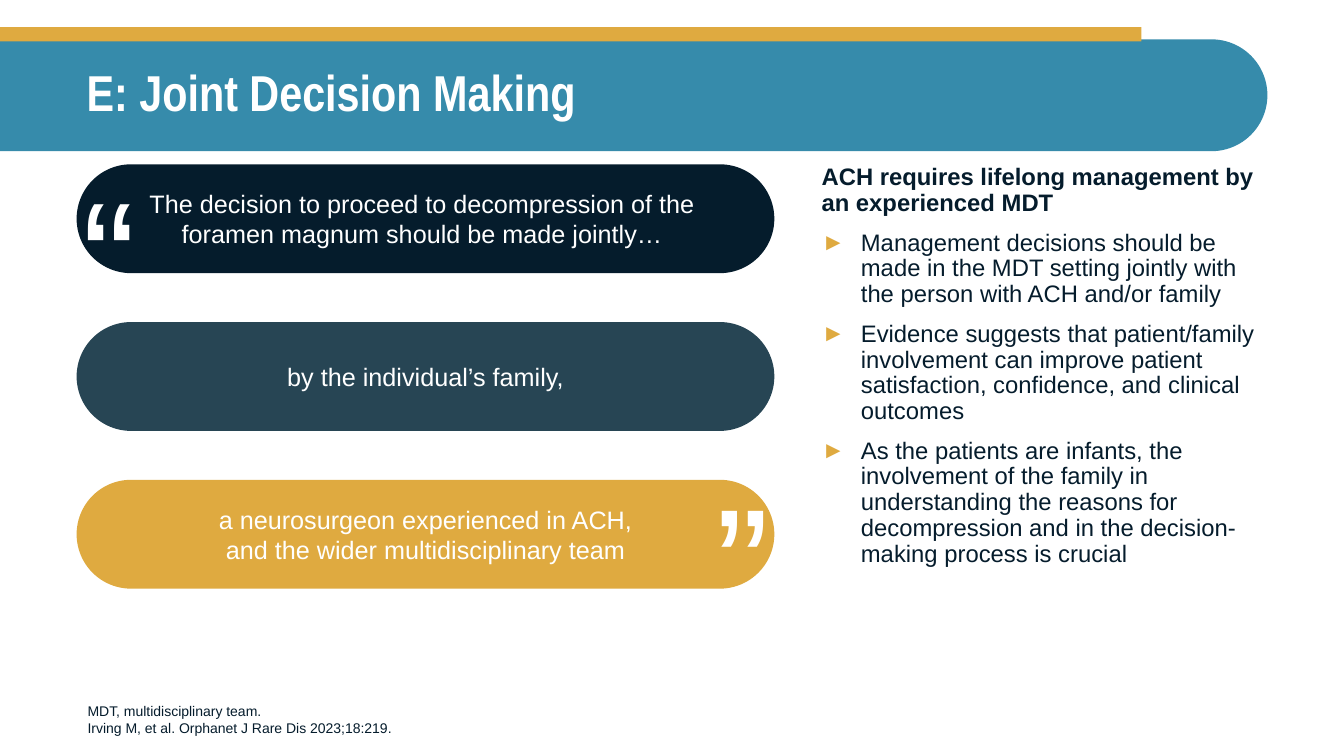
from lxml.etree import SubElement
from pptx import Presentation
from pptx.dml.color import RGBColor
from pptx.enum.shapes import MSO_SHAPE
from pptx.enum.text import MSO_ANCHOR, PP_ALIGN
from pptx.oxml.ns import qn
from pptx.util import Inches, Pt

TEAL = RGBColor(0x36, 0x8B, 0xAB)
GOLD = RGBColor(0xDF, 0xAA, 0x40)
NAVY = RGBColor(0x05, 0x1C, 0x2C)
SLATE = RGBColor(0x27, 0x45, 0x54)
WHITE = RGBColor(0xFF, 0xFF, 0xFF)


def add_block(slide, kind, left, top, width, height, color):
    shape = slide.shapes.add_shape(
        kind, Inches(left), Inches(top), Inches(width), Inches(height))
    shape.shadow.inherit = False
    shape.fill.solid()
    shape.fill.fore_color.rgb = color
    shape.line.fill.background()
    return shape


def add_text(slide, left, top, width, height, anchor=MSO_ANCHOR.TOP, wrap=True):
    box = slide.shapes.add_textbox(
        Inches(left), Inches(top), Inches(width), Inches(height))
    box.text_frame.word_wrap = wrap
    box.text_frame.vertical_anchor = anchor
    return box


def set_font(paragraph, size, color, bold=False, name="Arial"):
    font = paragraph.font
    font.name = name
    font.size = Pt(size)
    font.bold = bold
    font.color.rgb = color


def add_bullet(paragraph, indent):
    properties = paragraph._p.get_or_add_pPr()
    properties.set("marL", str(Inches(indent)))
    properties.set("indent", str(-Inches(indent)))
    bullet_color = SubElement(properties, qn("a:buClr"))
    SubElement(bullet_color, qn("a:srgbClr"), val=str(GOLD))
    SubElement(properties, qn("a:buFont"), typeface="Arial")
    SubElement(properties, qn("a:buChar"), char="►")


def add_header(slide, left, top, width, height, title):
    # Banner: rounded top side turned to face right
    banner = add_block(slide, MSO_SHAPE.ROUND_2_SAME_RECTANGLE,
                       left + (width - height) / 2, top + (height - width) / 2,
                       height, width, TEAL)
    banner.adjustments[0] = 0.5
    banner.adjustments[1] = 0
    banner.rotation = 90
    # Gold strip along the top edge
    add_block(slide, MSO_SHAPE.RECTANGLE, left, top - 0.12, width - 1.25, 0.14, GOLD)
    box = add_text(slide, left + 0.76, top, width - 0.76, height, MSO_ANCHOR.MIDDLE)
    paragraph = box.text_frame.paragraphs[0]
    paragraph.text = title
    paragraph.line_spacing = 0.9
    set_font(paragraph, 36, WHITE, bold=True, name="Arial Narrow")


def add_quote_mark(slide, left, top, rotation):
    box = add_text(slide, left, top, 0.74, 2.04, wrap=False)
    box.rotation = rotation
    paragraph = box.text_frame.paragraphs[0]
    paragraph.text = "“"
    set_font(paragraph, 115, WHITE)


def add_quote(slide, left, top, width, height, parts):
    pill_height = 1.08
    pitch = (height - pill_height) / (len(parts) - 1)
    for index, (text, color) in enumerate(parts):
        pill = add_block(slide, MSO_SHAPE.ROUNDED_RECTANGLE,
                         left, top + index * pitch, width, pill_height, color)
        pill.adjustments[0] = 0.5
        pill.text_frame.word_wrap = True
        pill.text_frame.vertical_anchor = MSO_ANCHOR.MIDDLE
        paragraph = pill.text_frame.paragraphs[0]
        paragraph.text = text
        paragraph.alignment = PP_ALIGN.CENTER
        set_font(paragraph, 18, WHITE)
    # Opening mark, and the same mark turned round to close
    add_quote_mark(slide, left - 0.04, top - 0.15, 0)
    add_quote_mark(slide, left + width - 0.69, top + height - 1.9, 180)


def add_body(slide, left, top, width, height, heading, bullets):
    text_frame = add_text(slide, left, top, width, height).text_frame
    paragraph = text_frame.paragraphs[0]
    paragraph.text = heading
    paragraph.line_spacing = 0.9
    set_font(paragraph, 17, NAVY, bold=True)
    for text in bullets:
        paragraph = text_frame.add_paragraph()
        paragraph.text = text
        paragraph.line_spacing = 0.9
        paragraph.space_before = Pt(10)
        add_bullet(paragraph, 0.39)
        set_font(paragraph, 17, NAVY)


def add_footnotes(slide, left, top, width, height, notes):
    text_frame = add_text(slide, left, top, width, height, MSO_ANCHOR.BOTTOM).text_frame
    text_frame.text = "\n".join(notes)
    for paragraph in text_frame.paragraphs:
        set_font(paragraph, 10, NAVY)


def main():
    presentation = Presentation()
    presentation.slide_width = Inches(13.33)
    presentation.slide_height = Inches(7.5)
    slide = presentation.slides.add_slide(presentation.slide_layouts[6])

    add_header(slide, 0, 0.39, 12.57, 1.11, "E: Joint Decision Making")
    add_body(slide, 8.05, 1.59, 4.52, 4.96,
             "ACH requires lifelong management by an experienced MDT", [
                 "Management decisions should be made in the MDT setting jointly "
                 "with the person with ACH and/or family",
                 "Evidence suggests that patient/family involvement can improve "
                 "patient satisfaction, confidence, and clinical outcomes",
                 "As the patients are infants, the involvement of the family in "
                 "understanding the reasons for decompression and in the "
                 "decision-making process is crucial",
             ])
    add_quote(slide, 0.76, 1.63, 6.92, 4.21, [
        ("The decision to proceed to decompression of the \n"
         "foramen magnum should be made jointly… ", NAVY),
        ("by the individual’s family,", SLATE),
        ("a neurosurgeon experienced in ACH,\n"
         "and the wider multidisciplinary team", GOLD),
    ])
    add_footnotes(slide, 0.77, 6.79, 9.88, 0.56, [
        "MDT, multidisciplinary team.",
        "Irving M, et al. Orphanet J Rare Dis 2023;18:219.",
    ])
    presentation.save("out.pptx")


if __name__ == "__main__":
    main()
